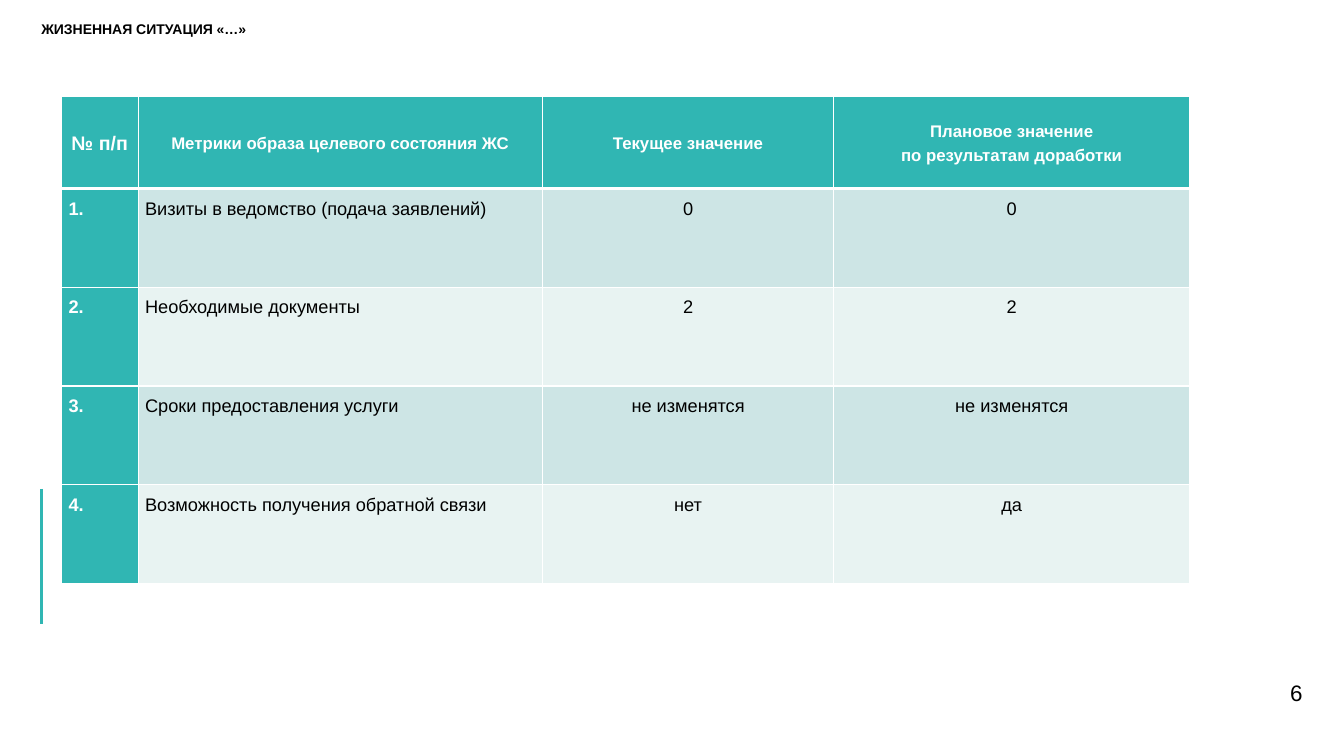
from lxml import etree
from pptx import Presentation
from pptx.dml.color import RGBColor
from pptx.enum.shapes import MSO_CONNECTOR
from pptx.enum.text import MSO_ANCHOR, PP_ALIGN
from pptx.oxml.ns import qn
from pptx.util import Inches, Pt

LEFT, CENTER, RIGHT, JUSTIFY = PP_ALIGN.LEFT, PP_ALIGN.CENTER, PP_ALIGN.RIGHT, PP_ALIGN.JUSTIFY
TOP, MIDDLE = MSO_ANCHOR.TOP, MSO_ANCHOR.MIDDLE
STRAIGHT = MSO_CONNECTOR.STRAIGHT

COLORS = {"teal": "30B6B3", "dark_band": "CDE5E5", "light_band": "E8F3F2",
          "white": "FFFFFF", "black": "000000"}
FONT = "Arial"
COLUMNS = [0.76, 4.01, 2.89, 3.53]
ROWS = [0.91] + [0.98] * 4
HEADINGS = ["№ п/п", "Метрики образа целевого состояния ЖС", "Текущее значение",
            "Плановое значение\vпо результатам доработки"]
METRICS = [
    ("Визиты в ведомство (подача заявлений)", "0", "0"),
    ("Необходимые документы", "2", "2"),
    ("Сроки предоставления услуги", "не изменятся", "не изменятся"),
    ("Возможность получения обратной связи", "нет", "да"),
]


def color(name):
    return RGBColor.from_string(COLORS[name])


def write(frame, wording, size, ink="black", bold=False, align=LEFT, spacing=1.0):
    frame.text = wording
    paragraph = frame.paragraphs[0]
    for name, value in {"alignment": align, "line_spacing": spacing}.items():
        setattr(paragraph, name, value)
    for run in paragraph.runs:
        for name, value in {"name": FONT, "size": Pt(size), "bold": bold}.items():
            setattr(run.font, name, value)
        run.font.color.rgb = color(ink)


def add_label(slide, box, wording, size, anchor=TOP, **style):
    frame = slide.shapes.add_textbox(*map(Inches, box)).text_frame
    layout = {"word_wrap": True, "vertical_anchor": anchor, "margin_left": 0,
              "margin_top": 0, "margin_right": 0, "margin_bottom": 0}
    for name, value in layout.items():
        setattr(frame, name, value)
    write(frame, wording, size, **style)


def add_accent(slide, left, top, height):
    accent = slide.shapes.add_connector(
        STRAIGHT, *map(Inches, (left, top, left, top + height)))
    accent.line.color.rgb = color("teal")
    accent.line.width = Pt(2.25)
    etree.SubElement(accent._element.spPr, qn("a:effectLst"))


def add_borders(cell, widths):
    properties = cell._tc.get_or_add_tcPr()
    for side, width in widths.items():
        border = etree.SubElement(properties, qn(f"a:ln{side}"), w=str(Pt(width)))
        fill = etree.SubElement(border, qn("a:solidFill"))
        etree.SubElement(fill, qn("a:srgbClr"), val=COLORS["white"])


def cell_style(row, column):
    if row == 0:
        return "teal", {"size": 12 if column else 14, "ink": "white", "bold": True,
                        "align": CENTER}
    if column == 0:
        return "teal", {"size": 13, "ink": "white", "bold": True, "align": JUSTIFY}
    band = "dark_band" if row % 2 else "light_band"
    return band, {"size": 13, "align": JUSTIFY if column == 1 else CENTER}


def add_metrics(slide, left, top):
    box = (left, top, sum(COLUMNS), sum(ROWS))
    table = slide.shapes.add_table(len(ROWS), len(COLUMNS), *map(Inches, box)).table
    for column, width in zip(table.columns, COLUMNS):
        column.width = Inches(width)
    for row, height in zip(table.rows, ROWS):
        row.height = Inches(height)
    content = [HEADINGS] + [(f"{number}.", *metric)
                            for number, metric in enumerate(METRICS, 1)]
    for row, wordings in enumerate(content):
        for column, wording in enumerate(wordings):
            cell = table.cell(row, column)
            fill, style = cell_style(row, column)
            layout = {"vertical_anchor": TOP if row else MIDDLE,
                      "margin_left": Inches(0.07), "margin_right": Inches(0.07),
                      "margin_top": Inches(0.04), "margin_bottom": Inches(0.08)}
            for name, value in layout.items():
                setattr(cell, name, value)
            add_borders(cell, {"L": 1, "R": 1, "T": 3 if row == 1 else 1,
                               "B": 1 if row else 3})
            cell.fill.solid()
            cell.fill.fore_color.rgb = color(fill)
            write(cell.text_frame, wording, spacing=1.3, **style)


def main():
    deck = Presentation()
    deck.slide_width, deck.slide_height = Inches(13.33), Inches(7.5)
    slide = deck.slides.add_slide(deck.slide_layouts[6])
    add_label(slide, (0.41, 0.22, 11.05, 0.39), "ЖИЗНЕННАЯ СИТУАЦИЯ «…»", 10,
              bold=True, spacing=0.9)
    add_label(slide, (11.86, 6.66, 1.06, 0.43), "6", 16, anchor=MIDDLE, align=RIGHT)
    add_accent(slide, 0.41, 4.85, 1.34)
    add_metrics(slide, 0.61, 0.96)
    deck.save("out.pptx")


if __name__ == "__main__":
    main()
